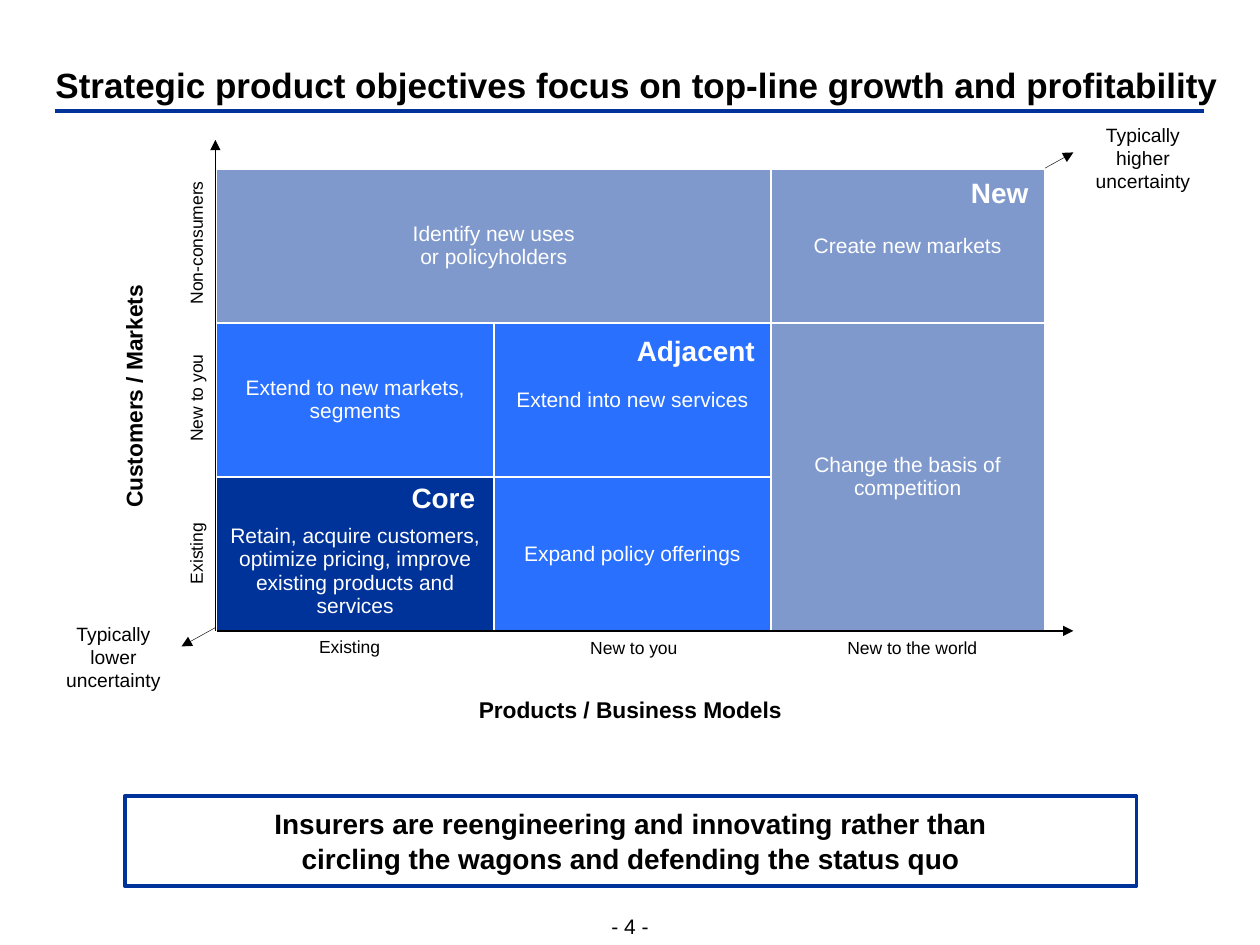
from lxml.etree import SubElement as add_element
from pptx import Presentation
from pptx.dml.color import RGBColor
from pptx.enum.shapes import MSO_CONNECTOR as Connector, MSO_SHAPE as Preset
from pptx.enum.text import MSO_ANCHOR as Anchor, PP_ALIGN as Align
from pptx.oxml.ns import qn
from pptx.util import Pt

COLORS = {"black": "000000", "white": "FFFFFF", "navy": "003399",
          "blue": "2970FF", "pale": "8099CC"}


class SlideBuilder:
    """Holds the text style and the slide that its methods draw on."""

    font_name = "Arial"

    def __init__(self, slide):
        self.slide = slide

    def color(self, name):
        return RGBColor.from_string(COLORS[name])

    def add_lines(self, frame, lines, size, color="black", bold=False,
                  align=Align.CENTER, spacing=None):
        for index, line in enumerate(lines):
            paragraph = frame.add_paragraph() if index else frame.paragraphs[0]
            paragraph.alignment = align
            if spacing:
                paragraph.line_spacing = spacing
            for part_index, part in enumerate(line.split("\n")):
                if part_index:
                    paragraph.add_line_break()
                run = paragraph.add_run()
                run.text = part
                run.font.name = self.font_name
                run.font.size = Pt(size)
                run.font.bold = bold
                run.font.color.rgb = self.color(color)

    def layout(self, frame, insets, anchor, wrap=True):
        frame.word_wrap = wrap
        frame.vertical_anchor = anchor
        frame.margin_left = frame.margin_right = Pt(insets[0])
        frame.margin_top = frame.margin_bottom = Pt(insets[1])

    def text(self, left, top, width, height, text, size, insets=(0, 0),
             anchor=Anchor.TOP, wrap=True, rotation=0, **style):
        shape = self.slide.shapes.add_textbox(Pt(left), Pt(top), Pt(width), Pt(height))
        shape.rotation = rotation
        self.layout(shape.text_frame, insets, anchor, wrap)
        self.add_lines(shape.text_frame, [text], size, **style)

    def label(self, center_x, center_y, width, height, text, size, **options):
        self.text(center_x - width / 2, center_y - height / 2, width, height,
                  text, size, wrap=False, **options)

    def line(self, start, end, color, weight, arrows=()):
        connector = self.slide.shapes.add_connector(
            Connector.STRAIGHT, *(Pt(value) for value in (*start, *end)))
        connector.line.color.rgb = self.color(color)
        connector.line.width = Pt(weight)
        outline = connector._element.spPr.find(qn("a:ln"))
        for arrow in arrows:
            add_element(outline, qn(f"a:{arrow}"), type="triangle")
        add_element(connector._element.spPr, qn("a:effectLst"))

    def box(self, left, top, width, height, lines, size, line_color, weight):
        shape = self.slide.shapes.add_shape(
            Preset.RECTANGLE, Pt(left), Pt(top), Pt(width), Pt(height))
        shape.shadow.inherit = False
        shape.fill.background()
        shape.line.color.rgb = self.color(line_color)
        shape.line.width = Pt(weight)
        self.layout(shape.text_frame, (8.64, 5.76), Anchor.BOTTOM)
        self.add_lines(shape.text_frame, lines, size, bold=True, spacing=1.06)

    def border(self, cell, color, weight):
        properties = cell._tc.get_or_add_tcPr()
        for side in ("lnL", "lnR", "lnT", "lnB"):
            edge = add_element(properties, qn(f"a:{side}"), w=str(int(Pt(weight))))
            fill = add_element(edge, qn("a:solidFill"))
            add_element(fill, qn("a:srgbClr"), val=COLORS[color])

    def table(self, left, top, widths, heights, entries, merges):
        table = self.slide.shapes.add_table(
            len(heights), len(widths), Pt(left), Pt(top),
            Pt(sum(widths)), Pt(sum(heights))).table
        table.first_row = table.horz_banding = False
        for column, width in zip(table.columns, widths):
            column.width = Pt(width)
        for row, height in zip(table.rows, heights):
            row.height = Pt(height)
        for first, last in merges:
            table.cell(*first).merge(table.cell(*last))
        for row_index, row in enumerate(entries):
            for column_index, (text, color) in enumerate(row):
                cell = table.cell(row_index, column_index)
                self.border(cell, "white", 1)
                cell.fill.solid()
                cell.fill.fore_color.rgb = self.color(color)
                cell.vertical_anchor = Anchor.MIDDLE
                if text:
                    self.add_lines(cell.text_frame, [text], 12, "white")
        return table


def main():
    presentation = Presentation()
    presentation.slide_width, presentation.slide_height = Pt(720), Pt(540)
    builder = SlideBuilder(presentation.slides.add_slide(presentation.slide_layouts[6]))

    builder.label(360, 528.8, 30, 15, "- 4 -", 12, anchor=Anchor.BOTTOM, spacing=1.06)
    builder.line((31.7, 63.2), (688.3, 63.2), "navy", 2.25)
    builder.text(31.7, 19.4, 670.3, 41, "Strategic product objectives focus on "
                 "top-line growth and profitability", 20, anchor=Anchor.BOTTOM,
                 bold=True, align=Align.LEFT)
    builder.label(360, 405.4, 176, 16, "Products / Business Models", 13, bold=True)
    builder.line((103.7, 369.4), (613.4, 87.1), "black", 0.25, ("headEnd", "tailEnd"))

    left, top, widths, heights = 123.8, 96.5, (158.4, 158.4, 156.2), (88, 88, 88)
    entries = [
        [("Identify new uses\nor policyholders", "pale"), ("", "pale"),
         ("Create new markets", "pale")],
        [("Extend to new markets, segments", "blue"),
         ("Extend into new services", "blue"),
         ("Change the basis of competition", "pale")],
        [("Retain, acquire customers, optimize pricing, improve existing "
          "products and services", "navy"),
         ("Expand policy offerings", "blue"), ("", "pale")],
    ]
    table = builder.table(left, top, widths, heights, entries,
                          [((0, 0), (0, 1)), ((1, 2), (2, 2))])
    core_cell = table.cell(2, 0)
    core_cell.vertical_anchor = Anchor.BOTTOM
    core_cell.margin_bottom = Pt(7.2)

    for center_y, width, text in [(138.8, 71, "Non-consumers"),
                                  (227.4, 50, "New to you"), (316.4, 35, "Existing")]:
        builder.label(112, center_y, width, 12, text, 10, rotation=270)
    for center_x, width, text in [(199.8, 35, "Existing"), (362.2, 50, "New to you"),
                                  (521.3, 75, "New to the world")]:
        builder.label(center_x, 369.7, width, 12, text, 10)
    builder.label(76.5, 226.5, 130, 16, "Customers / Markets", 13, bold=True, rotation=270)

    for x, y, level in [(25.9, 352.1, "lower"), (614.2, 67, "higher")]:
        builder.text(x, y, 77.8, 47.5, f"Typically {level} uncertainty", 11, (7.2, 3.6))

    bottom = top + sum(heights)
    builder.line((123.1, bottom), (123.1, 79.9), "black", 1, ("tailEnd",))
    builder.line((left, bottom), (613.4, bottom), "black", 1, ("tailEnd",))

    for x, y, width, text in [(540.7, 95.8, 54, "New"), (336.2, 185.8, 102.2, "Adjacent"),
                              (176.4, 270, 102.2, "Core")]:
        builder.text(x, y, width, 26.6, text, 16, (7.2, 3.6), color="white",
                     bold=True, align=Align.RIGHT, spacing=1.06)

    builder.box(71.3, 455, 578.2, 51.1,
                ["Insurers are reengineering and innovating rather than",
                 "circling the wagons and defending the status quo"], 16, "navy", 2.25)
    presentation.save("out.pptx")


if __name__ == "__main__":
    main()
